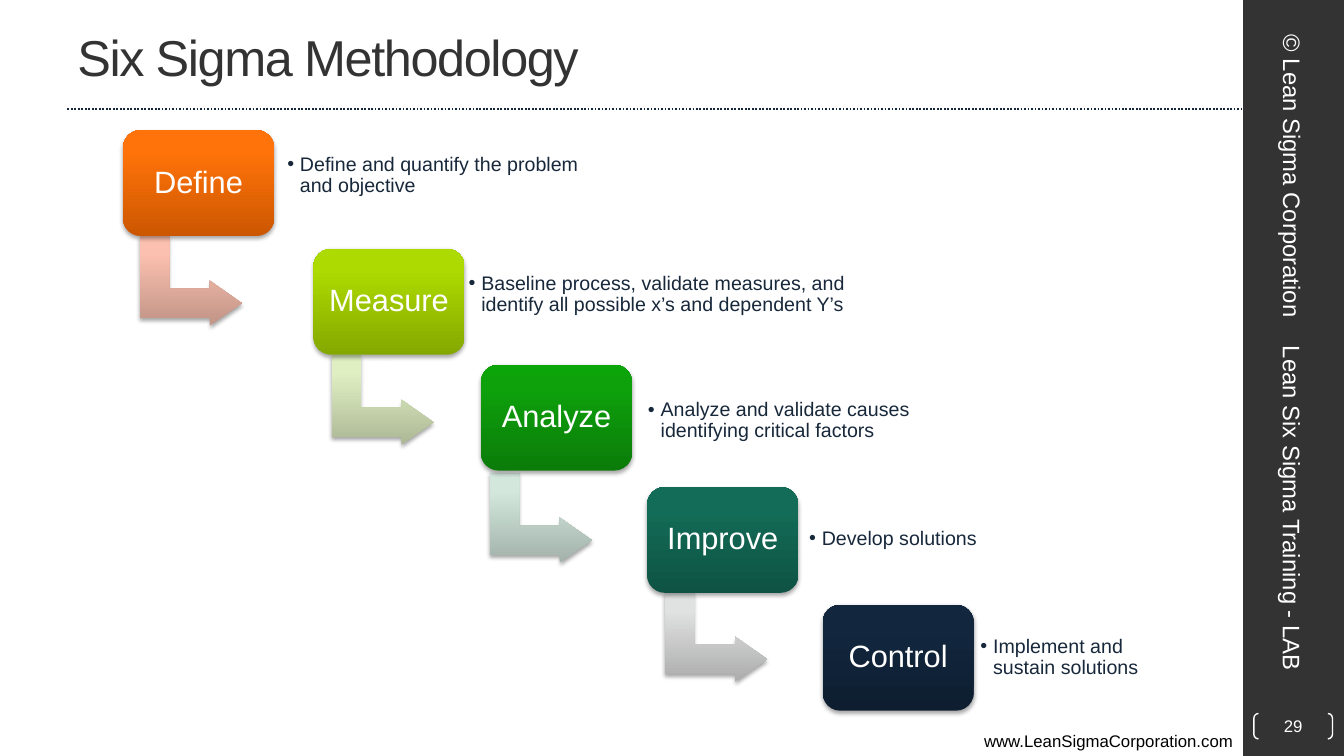
from lxml.etree import SubElement as Sub
from pptx import Presentation
from pptx.dml.color import RGBColor as RGB
from pptx.enum.dml import MSO_LINE
from pptx.enum.shapes import MSO_CONNECTOR, MSO_SHAPE as Kind
from pptx.enum.text import MSO_ANCHOR as Anchor, PP_ALIGN as Align
from pptx.oxml.ns import qn
from pptx.util import Cm, Pt

hues = {"bar": "333333", "rule": "17273B", "note": "18283B",
        "white": "FFFFFF", "black": "000000"}

# name, box corner, box gradient, arrow corner, arrow gradient, note, note frame
steps = [
    ("Define", (3.1, 3.28), ("CC5700", "FF730A", "FF730B"),
     (3.68, 5.79), ("C19486", "FBC0AF", "FDC0AE"),
     "Define and quantify the problem and objective", (7.09, 3.38, 7.98, 2.08)),
    ("Measure", (7.9, 6.27), ("85A800", "ADDA00", "AEDC00"),
     (8.51, 8.79), ("ACB895", "DFEFC2", "E0F1C2"),
     "Baseline process, validate measures, and identify all possible x’s and dependent Y’s",
     (11.66, 6.35, 11.2, 2.16)),
    ("Analyze", (12.12, 9.19), ("0B7C09", "0EA10C", "0BA409"),
     (12.5, 11.76), ("A2B2AA", "D3E7DD", "D3E8DE"),
     "Analyze and validate causes identifying critical factors", (16.18, 9.53, 8.99, 2.16)),
    ("Improve", (16.31, 12.27), ("0E5343", "136C57", "116E58"),
     (16.92, 14.76), ("ADADAE", "E0E1E1", "E1E2E2"),
     "Develop solutions", (20.24, 12.5, 5.94, 2.16)),
    ("Control", (20.73, 15.24), ("0E1E30", "12263E", "11263F"),
     None, None,
     "Implement and sustain solutions", (24.56, 15.37, 5.51, 2.41)),
]


def write(shape, text, size, hue, align=Align.LEFT, anchor=Anchor.MIDDLE, inset=None):
    """Fill a shape with one paragraph; inset is (side, top) in cm."""
    frame = shape.text_frame
    side, top = inset or (0.25, 0.13)
    look = {"word_wrap": True, "vertical_anchor": anchor,
            "margin_left": Cm(side), "margin_right": Cm(side),
            "margin_top": Cm(top), "margin_bottom": Cm(top)}
    for key, value in look.items():
        setattr(frame, key, value)
    para = frame.paragraphs[0]
    para.alignment = align
    run = para.add_run()
    run.text = text
    for key, value in {"name": "Arial", "size": Pt(size)}.items():
        setattr(run.font, key, value)
    run.font.color.rgb = RGB.from_string(hues[hue])
    return para


def add_glossy(kind, spot, size, tones):
    """Add a shape with an upward gradient and a soft shadow below."""
    shape = shapes.add_shape(kind, *map(Cm, spot + size))
    shape.line.fill.background()
    shape.fill.background()
    shape.shadow.inherit = False
    props = shape.fill._xPr
    blank = props.find(qn("a:noFill"))
    grad = Sub(props, qn("a:gradFill"), rotWithShape="0")
    props.replace(blank, grad)
    stops = Sub(grad, qn("a:gsLst"))
    for place, tone in zip((0, 80, 100), tones):
        stop = Sub(stops, qn("a:gs"), pos=str(place * 1000))
        Sub(stop, qn("a:srgbClr"), val=tone)
    Sub(grad, qn("a:lin"), ang="16200000", scaled="0")
    shade = Sub(props.find(qn("a:effectLst")), qn("a:outerShdw"),
                blurRad=str(Pt(3.1)), dist=str(Pt(1.8)), dir="5400000", rotWithShape="0")
    Sub(Sub(shade, qn("a:srgbClr"), val=hues["black"]), qn("a:alpha"), val="35000")
    return shape


deck = Presentation()
deck.slide_width, deck.slide_height = Cm(33.87), Cm(19.05)
shapes = deck.slides.add_slide(deck.slide_layouts[6]).shapes

# Side bar, rule, web address and title
bar = shapes.add_shape(Kind.RECTANGLE, Cm(31.33), 0, Cm(2.54), Cm(19.05))
bar.shadow.inherit = False
bar.fill.solid()
bar.fill.fore_color.rgb = RGB.from_string(hues["bar"])
bar.line.fill.background()

rule = shapes.add_connector(MSO_CONNECTOR.STRAIGHT, Cm(1.7), Cm(2.74), Cm(31.33), Cm(2.74))
rule.line.color.rgb = RGB.from_string(hues["rule"])
rule.line.width = Pt(1.25)
rule.line.dash_style = MSO_LINE.ROUND_DOT
Sub(rule._element.spPr, qn("a:effectLst"))

site = shapes.add_textbox(0, Cm(18.29), Cm(31.33), Cm(0.76))
write(site, "www.LeanSigmaCorporation.com", 12, "black", Align.RIGHT, Anchor.TOP)

title = shapes.add_textbox(Cm(1.7), Cm(0.08), Cm(28.22), Cm(2.67))
head = write(title, "Six Sigma Methodology", 36, "bar")
head.runs[0].font._element.set("spc", "-100")

# Staircase of steps
for name, spot, tones, bend, tints, note, area in steps:
    if bend:
        arrow = add_glossy(Kind.BENT_UP_ARROW, bend, (2.26, 2.57), tints)
        arrow.rotation = 90
        for i, share in enumerate((0.328, 0.25, 0.358)):
            arrow.adjustments[i] = share
    box = add_glossy(Kind.ROUNDED_RECTANGLE, spot, (3.81, 2.67), tones)
    write(box, name, 22, "white", Align.CENTER, inset=(0.23, 0.23)).line_spacing = 0.9

    label = shapes.add_textbox(*map(Cm, area))
    para = write(label, note, 14, "note", inset=(0.15, 0.15))
    props = para._p.get_or_add_pPr()
    props.set("marL", str(Cm(0.32)))
    props.set("indent", str(-Cm(0.32)))
    Sub(props, qn("a:buFont"), typeface="Arial")
    Sub(props, qn("a:buChar"), char="•")
    para.line_spacing = 0.9

# Page number and upright captions
page = shapes.add_shape(Kind.DOUBLE_BRACKET, Cm(31.6), Cm(17.98), Cm(1.98), Cm(0.64))
page.shadow.inherit = False
page.fill.background()
page.line.color.rgb = RGB.from_string(hues["white"])
page.line.width = Pt(1)
page.adjustments[0] = 0.179
write(page, "29", 12, "white", Align.CENTER, inset=(0, 0))

for text, area, align in (
    ("© Lean Sigma Corporation", (28.55, 3.76, 8.05, 1.35), Align.CENTER),
    ("Lean Six Sigma Training - LAB", (27.91, 12.45, 9.32, 1.35), Align.LEFT),
):
    side = shapes.add_textbox(*map(Cm, area))
    side.rotation = 90
    write(side, text, 17, "white", align)

deck.save("out.pptx")
